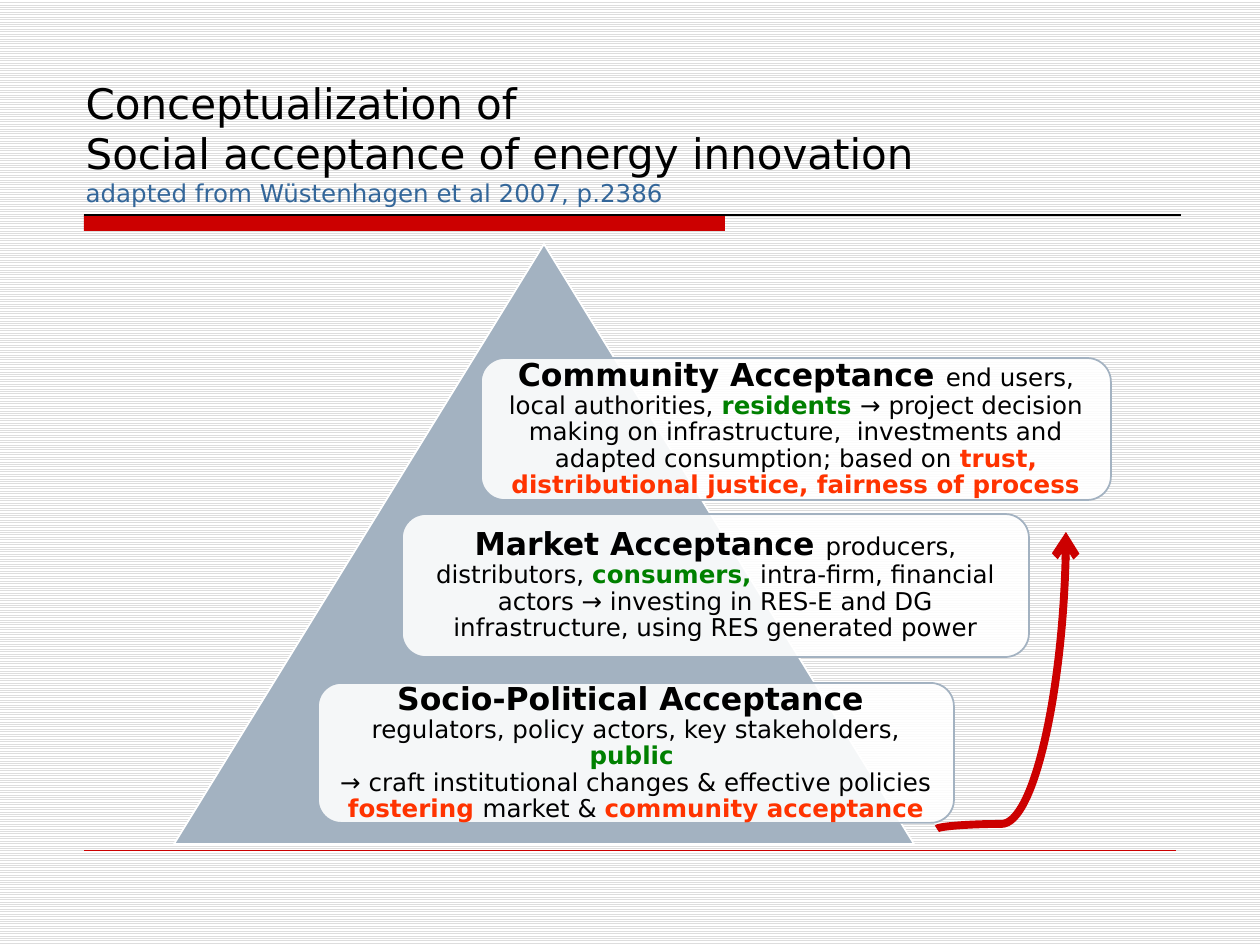
from dataclasses import dataclass

import pptx
import pptx.dml.color
import pptx.enum.dml
import pptx.enum.shapes
import pptx.enum.text
import pptx.oxml
import pptx.oxml.ns
import pptx.util

RGBColor = pptx.dml.color.RGBColor
BLACK = RGBColor(0x00, 0x00, 0x00)
WHITE = RGBColor(0xFF, 0xFF, 0xFF)
STRIPE = RGBColor(0xDD, 0xDD, 0xDD)
RED = RGBColor(0xCC, 0x00, 0x00)
ORANGE = RGBColor(0xFF, 0x33, 0x00)
GREEN = RGBColor(0x00, 0x80, 0x00)
BLUE = RGBColor(0x33, 0x66, 0x99)
SLATE = RGBColor(0xA3, 0xB2, 0xC1)

FONT = "DejaVu Sans"
EMU_PER_PX = 914400 / 126
SHAPES = pptx.enum.shapes.MSO_SHAPE
CONNECTORS = pptx.enum.shapes.MSO_CONNECTOR


@dataclass
class Span:
    text: str
    size: int = 14
    color: RGBColor = BLACK
    bold: bool = False


@dataclass
class Box:
    left: int
    top: int
    width: int
    height: int


@dataclass
class Level:
    box: Box
    paragraphs: list[list[Span]]


def heading(text: str) -> Span:
    return Span(text, size=18, bold=True)


def actor(text: str) -> Span:
    return Span(text, color=GREEN, bold=True)


def emphasis(text: str) -> Span:
    return Span(text, color=ORANGE, bold=True)


LEVELS = [
    Level(Box(481, 358, 630, 142), [[
        heading("Community Acceptance "),
        Span("end users, local authorities, "),
        actor("residents "),
        Span("→ project decision making on infrastructure,  investments "
             "and adapted consumption; based on "),
        emphasis("trust, distributional justice, fairness of process"),
    ]]),
    Level(Box(402, 514, 627, 143), [[
        heading("Market Acceptance "),
        Span("producers, distributors, "),
        actor("consumers, "),
        Span("intra-firm, financial actors → investing in RES-E and DG "
             "infrastructure, using RES generated power"),
    ]]),
    Level(Box(318, 683, 636, 140), [
        [heading("Socio-Political Acceptance ")],
        [Span("regulators, policy actors, key stakeholders, "),
         actor("public ")],
        [Span("→ craft institutional changes & effective policies "),
         emphasis("fostering "),
         Span("market & "),
         emphasis("community acceptance")],
    ]),
]

TITLE = [
    [Span("Conceptualization of ", size=24)],
    [Span("Social acceptance of energy innovation", size=24)],
    [Span("adapted from Wüstenhagen et al 2007, p.2386", color=BLUE)],
]


def px(length: float) -> int:
    return round(length * EMU_PER_PX)


def write(frame, paragraphs: list[list[Span]], align, line_spacing: float) -> None:
    frame.word_wrap = True
    frame.auto_size = pptx.enum.text.MSO_AUTO_SIZE.NONE
    frame.text = "\n".join("" for _ in paragraphs)
    for paragraph, spans in zip(frame.paragraphs, paragraphs):
        paragraph.alignment = align
        paragraph.line_spacing = line_spacing
        for span in spans:
            run = paragraph.add_run()
            run.text = span.text
            run.font.name = FONT
            run.font.size = pptx.util.Pt(span.size)
            run.font.color.rgb = span.color
            run.font.bold = span.bold


def draw_shape(slide, kind, box: Box, fill: RGBColor, line: RGBColor | None):
    shape = slide.shapes.add_shape(
        kind, px(box.left), px(box.top), px(box.width), px(box.height))
    shape.shadow.inherit = False
    shape.fill.solid()
    shape.fill.fore_color.rgb = fill
    if line is None:
        shape.line.fill.background()
    else:
        shape.line.color.rgb = line
        shape.line.width = pptx.util.Pt(1)
    return shape


def draw_line(slide, kind, start: tuple[int, int], end: tuple[int, int],
              color: RGBColor, width: float):
    line = slide.shapes.add_connector(kind, *map(px, start + end))
    line.line.color.rgb = color
    line.line.width = pptx.util.Pt(width)
    pptx.oxml.ns.qn("a:effectLst")
    properties = line._element.spPr
    properties.append(properties.makeelement(pptx.oxml.ns.qn("a:effectLst"), {}))
    return line


def draw_level(slide, level: Level) -> None:
    panel = draw_shape(slide, SHAPES.ROUNDED_RECTANGLE, level.box, WHITE, SLATE)
    color = panel._element.spPr.find(".//" + pptx.oxml.ns.qn("a:srgbClr"))
    color.append(color.makeelement(pptx.oxml.ns.qn("a:alpha"), {"val": "90000"}))
    frame = panel.text_frame
    frame.margin_left = frame.margin_right = px(9)
    frame.margin_top = frame.margin_bottom = px(9)
    frame.vertical_anchor = pptx.enum.text.MSO_ANCHOR.MIDDLE
    write(frame, level.paragraphs, pptx.enum.text.PP_ALIGN.CENTER, 0.9)


def draw_feedback_arrow(slide) -> None:
    """Curve from the bottom level up to the community level."""
    arrow = draw_line(slide, CONNECTORS.CURVE, (1150, 745), (853, 616), RED, 4.5)
    properties = arrow._element.spPr
    qn = pptx.oxml.ns.qn
    properties.find(qn("a:xfrm")).set("rot", str(90 * 60000))
    adjustments = properties.find(qn("a:prstGeom")).find(qn("a:avLst"))
    adjustments.append(adjustments.makeelement(
        qn("a:gd"), {"name": "adj1", "fmla": "val 1700"}))
    outline = properties.find(qn("a:ln"))
    outline.append(outline.makeelement(qn("a:tailEnd"), {"type": "arrow"}))


def main() -> None:
    presentation = pptx.Presentation()
    presentation.slide_width = px(1260)
    presentation.slide_height = px(945)
    slide = presentation.slides.add_slide(presentation.slide_layouts[5])

    # Striped background
    backdrop = slide.background.fill
    backdrop.patterned()
    backdrop.pattern = pptx.enum.dml.MSO_PATTERN.LIGHT_HORIZONTAL
    backdrop.fore_color.rgb = STRIPE
    backdrop.back_color.rgb = WHITE

    # Rules under the title and at the foot
    draw_shape(slide, SHAPES.RECTANGLE, Box(84, 215, 641, 16), RED, None)
    draw_line(slide, CONNECTORS.STRAIGHT, (84, 215), (1181, 215), BLACK, 0.75)
    draw_line(slide, CONNECTORS.STRAIGHT, (84, 850), (1176, 850), RED, 0.25)

    # Title
    title = slide.shapes.title
    title.left, title.top = px(73), px(55)
    title.width, title.height = px(1152), px(159)
    title.text_frame.vertical_anchor = pptx.enum.text.MSO_ANCHOR.BOTTOM
    write(title.text_frame, TITLE, pptx.enum.text.PP_ALIGN.LEFT, 1.0)

    # Pyramid with its three levels
    draw_shape(slide, SHAPES.ISOSCELES_TRIANGLE, Box(174, 244, 740, 600),
               SLATE, WHITE)
    for level in LEVELS:
        draw_level(slide, level)
    draw_feedback_arrow(slide)

    presentation.save("out.pptx")


if __name__ == "__main__":
    main()
